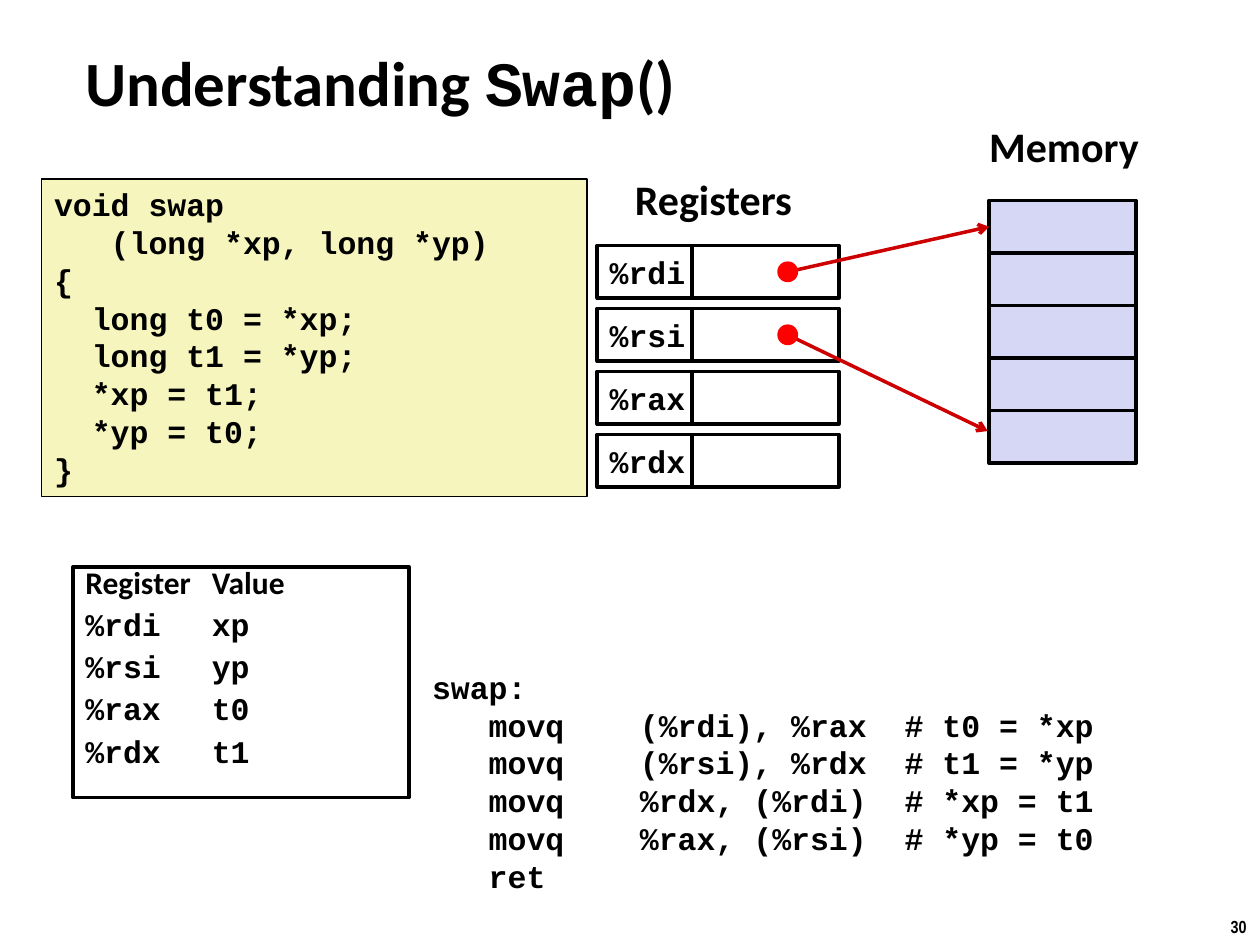
import pptx
import pptx.util
import pptx.dml.color
import pptx.enum.shapes
import pptx.enum.text
import pptx.oxml
import lxml.etree

Cm = pptx.util.Cm
Pt = pptx.util.Pt
RGBColor = pptx.dml.color.RGBColor
MSO_SHAPE = pptx.enum.shapes.MSO_SHAPE
PP_ALIGN = pptx.enum.text.PP_ALIGN
MSO_ANCHOR = pptx.enum.text.MSO_ANCHOR
qn = pptx.oxml.ns.qn

BLACK = RGBColor(0x00, 0x00, 0x00)
WHITE = RGBColor(0xFF, 0xFF, 0xFF)
CODE_YELLOW = RGBColor(0xF6, 0xF5, 0xBD)
MEMORY_LILAC = RGBColor(0xD6, 0xD6, 0xF5)
ARROW_RED = RGBColor(0xCC, 0x00, 0x00)
DOT_RED = RGBColor(0xFF, 0x00, 0x00)
HEADING_FONT = "Calibri"
CODE_FONT = "Courier New"

SWAP_CODE = """void swap
   (long *xp, long *yp)
{
  long t0 = *xp;
  long t1 = *yp;
  *xp = t1;
  *yp = t0;
}"""
ASSEMBLY_CODE = """swap:
   movq    (%rdi), %rax  # t0 = *xp
   movq    (%rsi), %rdx  # t1 = *yp
   movq    %rdx, (%rdi)  # *xp = t1
   movq    %rax, (%rsi)  # *yp = t0
   ret"""
REGISTER_VALUES = [("%rdi", "xp"), ("%rsi", "yp"), ("%rax", "t0"), ("%rdx", "t1")]

presentation = pptx.Presentation()
presentation.slide_width = Cm(25.4)
presentation.slide_height = Cm(19.05)
slide = presentation.slides.add_slide(presentation.slide_layouts[6])


def add_box(left, top, width, height, fill=None, line_width=2, kind=MSO_SHAPE.RECTANGLE):
    """Add a preset shape, measured in cm; no fill or a zero line width means none."""
    shape = slide.shapes.add_shape(kind, Cm(left), Cm(top), Cm(width), Cm(height))
    shape.shadow.inherit = False
    if fill is None:
        shape.fill.background()
    else:
        shape.fill.solid()
        shape.fill.fore_color.rgb = fill
    if line_width:
        shape.line.color.rgb = BLACK
        shape.line.width = Pt(line_width)
    else:
        shape.line.fill.background()
    return shape


def write_text(shape, text, size, font_name, wrap=True, anchor=MSO_ANCHOR.TOP,
               alignment=PP_ALIGN.LEFT):
    """Fill the shape with bold black text, one paragraph per line."""
    text_frame = shape.text_frame
    text_frame.text = text
    text_frame.word_wrap = wrap
    text_frame.vertical_anchor = anchor
    for paragraph in text_frame.paragraphs:
        paragraph.alignment = alignment
        for run in paragraph.runs:
            run.font.size = Pt(size)
            run.font.name = font_name
            run.font.bold = True
            run.font.color.rgb = BLACK


# Title, with the function name in the code font
title = slide.shapes.add_textbox(Cm(1.47), Cm(0.84), Cm(17.7), Cm(1.6))
write_text(title, "Understanding ", 36, HEADING_FONT, anchor=MSO_ANCHOR.MIDDLE)
for part, font_name in [("Swap", CODE_FONT), ("()", HEADING_FONT)]:
    run = title.text_frame.paragraphs[0].add_run()
    run.text = part
    run.font.size = Pt(36)
    run.font.name = font_name
    run.font.bold = True
    run.font.color.rgb = BLACK

# Headings and page number
for text, left, top, width in [("Memory", 19.69, 2.31, 3.56), ("Registers", 12.55, 3.38, 3.76)]:
    heading = slide.shapes.add_textbox(Cm(left), Cm(top), Cm(width), Cm(1.27))
    write_text(heading, text, 24, HEADING_FONT, wrap=False)
page_number = slide.shapes.add_textbox(Cm(24.54), Cm(18.34), Cm(0.86), Cm(0.69))
write_text(page_number, "30", 10, "Arial Narrow", wrap=False, alignment=PP_ALIGN.CENTER)

# Source and assembly code
code_box = add_box(0.84, 3.61, 11, 6.4, CODE_YELLOW, line_width=1)
write_text(code_box, SWAP_CODE, 18, CODE_FONT)
assembly = slide.shapes.add_textbox(Cm(8.46), Cm(13.34), Cm(16.31), Cm(4.88))
write_text(assembly, ASSEMBLY_CODE, 18, CODE_FONT)

# Which value each register holds
legend = add_box(1.47, 11.43, 6.78, 4.65)
legend_lines = ["\t".join(pair) for pair in [("Register", "Value")] + REGISTER_VALUES]
write_text(legend, "\n".join(legend_lines), 18, CODE_FONT)
for paragraph in legend.text_frame.paragraphs:
    paragraph.line_spacing = 0.7
    paragraph.space_before = Pt(9)
    tab_list = lxml.etree.SubElement(paragraph._p.get_or_add_pPr(), qn("a:tabLst"))
    lxml.etree.SubElement(tab_list, qn("a:tab"), pos=str(Cm(2.55)), algn="l")
for run in legend.text_frame.paragraphs[0].runs:
    run.font.name = HEADING_FONT

# Register file and memory
CELL_HEIGHT = 1.06
CELL_WIDTH = 2.96
REGISTER_TOP = 4.95
REGISTER_PITCH = 1.27
for row, (register, _) in enumerate(REGISTER_VALUES):
    top = REGISTER_TOP + row * REGISTER_PITCH
    name_cell = add_box(12.04, top, 1.91, CELL_HEIGHT, WHITE)
    write_text(name_cell, register, 18, CODE_FONT, wrap=False, anchor=MSO_ANCHOR.MIDDLE)
    add_box(13.95, top, CELL_WIDTH, CELL_HEIGHT, WHITE)
memory_cells = [
    add_box(19.94, 4.04 + row * CELL_HEIGHT, CELL_WIDTH, CELL_HEIGHT, MEMORY_LILAC)
    for row in range(5)
]

# Pointers from %rdi and %rsi into memory
DOT_X = 15.88
DOT_SIZE = 0.42
for row, (end_x, end_y) in enumerate([(19.94, 4.57), (19.91, 8.69)]):
    dot_y = REGISTER_TOP + row * REGISTER_PITCH + CELL_HEIGHT / 2
    pointer = slide.shapes.add_connector(
        pptx.enum.shapes.MSO_CONNECTOR.STRAIGHT, Cm(DOT_X), Cm(dot_y), Cm(end_x), Cm(end_y))
    if row == 0:
        pointer.end_connect(memory_cells[0], 1)
    pointer.line.color.rgb = ARROW_RED
    pointer.line.width = Pt(2)
    lxml.etree.SubElement(pointer.line._get_or_add_ln(), qn("a:tailEnd"), type="arrow")
    lxml.etree.SubElement(pointer._element.spPr, qn("a:effectLst"))
    add_box(DOT_X - DOT_SIZE / 2, dot_y - DOT_SIZE / 2, DOT_SIZE, DOT_SIZE, DOT_RED,
            line_width=0, kind=MSO_SHAPE.OVAL)

presentation.save("out.pptx")
